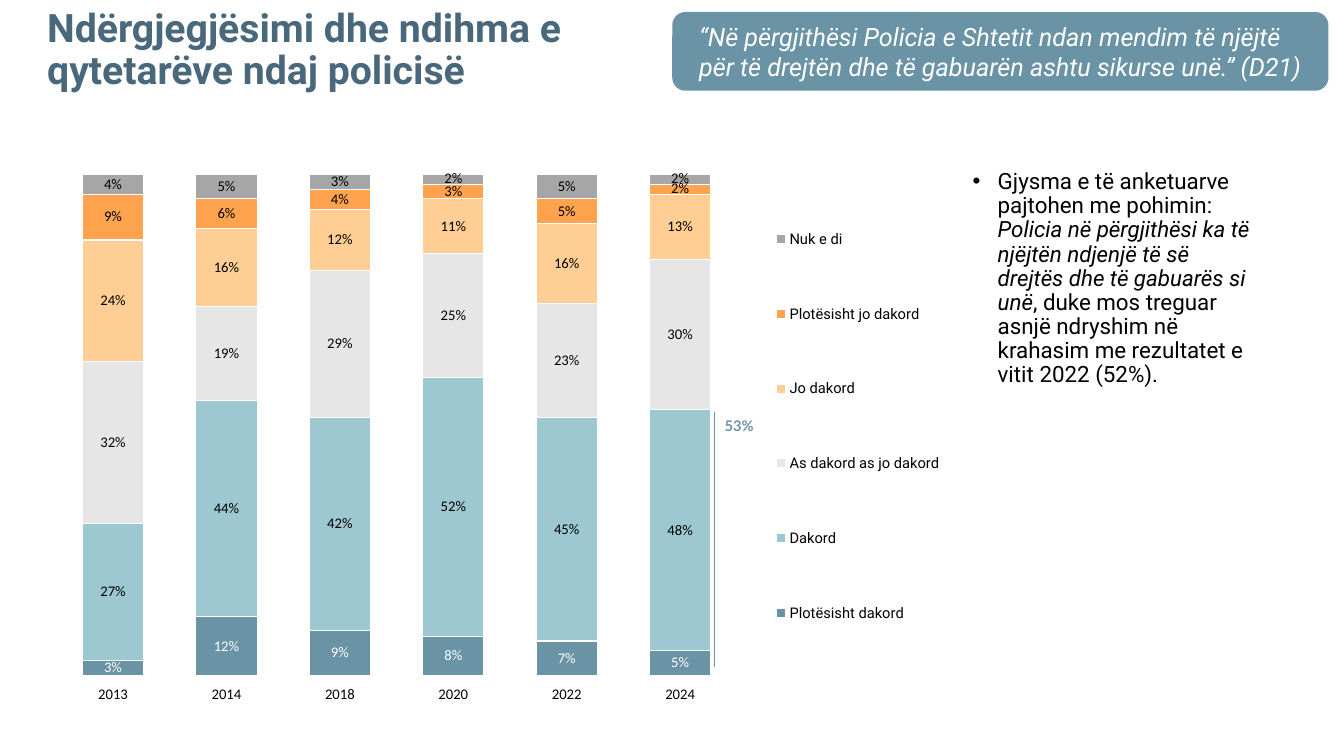
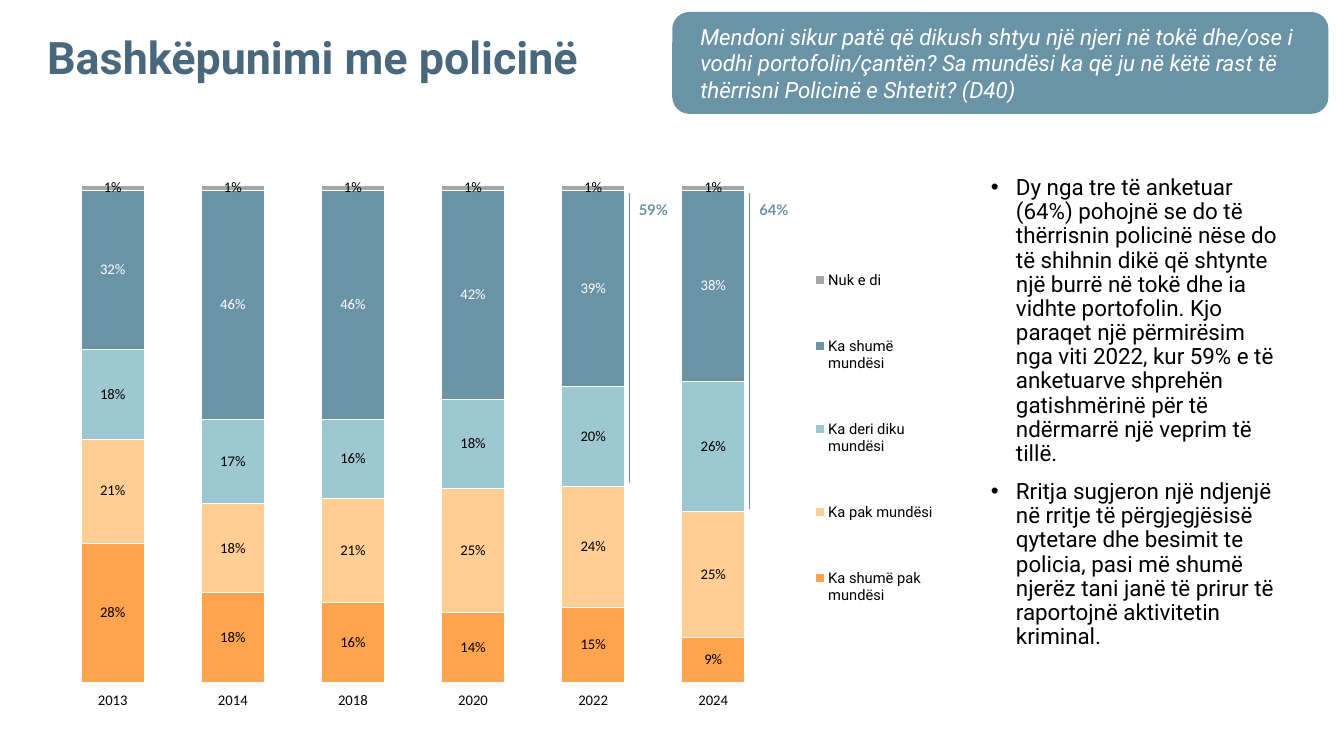
from lxml.etree import SubElement
from pptx import Presentation
from pptx.chart.data import CategoryChartData
from pptx.dml.color import RGBColor
from pptx.enum.chart import XL_CHART_TYPE, XL_LEGEND_POSITION, XL_TICK_LABEL_POSITION, XL_TICK_MARK
from pptx.enum.shapes import MSO_CONNECTOR, MSO_SHAPE
from pptx.enum.text import MSO_ANCHOR, PP_ALIGN
from pptx.oxml.ns import qn
from pptx.util import Pt

NAVY = RGBColor(0x49, 0x68, 0x7C)
STEEL = RGBColor(0x6A, 0x93, 0xA5)
AQUA = RGBColor(0x9D, 0xC8, 0xD1)
PALE = RGBColor(0xE7, 0xE6, 0xE6)
PEACH = RGBColor(0xFF, 0xCE, 0x94)
ORANGE = RGBColor(0xFF, 0xA3, 0x4E)
GRAY = RGBColor(0xA6, 0xA6, 0xA6)
BLACK = RGBColor(0, 0, 0)
WHITE = RGBColor(0xFF, 0xFF, 0xFF)

MARGIN = 26.6
CHART_W = 651.6
SMALL = 10.5
YEARS = ["2013", "2014", "2018", "2020", "2022", "2024"]

# Boxes are (left, top, width, height) in points; layouts are fractions of the chart.
# Paragraphs are lists of (text, italic); brackets are (x, top, bottom, label top, label).
SLIDES = [
    {
        "title": ("Ndërgjegjësimi dhe ndihma e qytetarëve ndaj policisë", 28, 8),
        "question": ("“Në përgjithësi Policia e Shtetit ndan mendim të njëjtë për të drejtën "
                     "dhe të gabuarën ashtu sikurse unë.” (D21)", 18, 56.2),
        "chart": (113.8, 393.8),
        "gap": 85,
        "plot": (0.021, 0.027, 0.746, 0.91),
        "legend": (0.8, 0.025, 0.2, 0.918),
        "series": [
            ("Plotësisht dakord", STEEL, (3, 12, 9, 8, 7, 5)),
            ("Dakord", AQUA, (27, 44, 42, 52, 45, 48)),
            ("As dakord as jo dakord", PALE, (32, 19, 29, 25, 23, 30)),
            ("Jo dakord", PEACH, (24, 16, 12, 11, 16, 13)),
            ("Plotësisht jo dakord", ORANGE, (9, 6, 4, 3, 5, 2)),
            ("Nuk e di", GRAY, (4, 5, 3, 2, 5, 2)),
        ],
        "brackets": [(510.5, 294.5, 476.6, 294.5, "53%")],
        "body": (687.6, 118, 216, 386),
        "bullets": [[
            ("Gjysma e të anketuarve pajtohen me pohimin: ", False),
            ("Policia në përgjithësi ka të njëjtën ndjenjë të së drejtës dhe të gabuarës si unë",
             True),
            (", duke mos treguar asnjë ndryshim në krahasim me rezultatet e vitit 2022 (52%).",
             False),
        ]],
    },
    {
        "title": ("Bashkëpunimi me policinë", 32, 14.4),
        "question": ("Mendoni sikur patë që dikush shtyu një njeri në tokë dhe/ose i vodhi "
                     "portofolin/çantën? Sa mundësi ka që ju në këtë rast të thërrisni Policinë "
                     "e Shtetit? (D40)", 16, 72.7),
        "chart": (121.7, 391.7),
        "gap": 90,
        "plot": (0.017, 0.028, 0.79, 0.906),
        "legend": (0.845, 0.095, 0.145, 0.785),
        "series": [
            ("Ka shumë pak mundësi", ORANGE, (28, 18, 16, 14, 15, 9)),
            ("Ka pak mundësi", PEACH, (21, 18, 21, 25, 24, 25)),
            ("Ka deri diku mundësi", AQUA, (18, 17, 16, 18, 20, 26)),
            ("Ka shumë mundësi", STEEL, (32, 46, 46, 42, 39, 38)),
            ("Nuk e di", GRAY, (1, 1, 1, 1, 1, 1)),
        ],
        "brackets": [(449.3, 138.2, 344.9, 139.7, "59%"), (535.3, 138.2, 363.6, 139.7, "64%")],
        "body": (700.6, 122.4, 222.5, 391.7),
        "bullets": [
            [("Dy nga tre të anketuar (64%) pohojnë se do të thërrisnin policinë nëse do të "
              "shihnin dikë që shtynte një burrë në tokë dhe ia vidhte portofolin. Kjo paraqet "
              "një përmirësim nga viti 2022, kur 59% e të anketuarve shprehën gatishmërinë për "
              "të ndërmarrë një veprim të tillë.", False)],
            [("Rritja sugjeron një ndjenjë në rritje të përgjegjësisë qytetare dhe besimit te "
              "policia, pasi më shumë njerëz tani janë të prirur të raportojnë aktivitetin "
              "kriminal.", False)],
        ],
    },
]


def set_font(font, name, size, color, bold=False, italic=False):
    font.name, font.size, font.bold, font.italic = name, Pt(size), bold, italic
    font.color.rgb = color


def add_text_box(slide, box):
    tf = slide.shapes.add_textbox(*map(Pt, box)).text_frame
    tf.word_wrap = True
    return tf


def add_title(slide, text, size, top):
    tf = add_text_box(slide, (MARGIN, top, 453, 56.2))
    tf.vertical_anchor = MSO_ANCHOR.MIDDLE
    tf.text = text
    p = tf.paragraphs[0]
    p.line_spacing = 0.9
    set_font(p.runs[0].font, "Roboto", size, NAVY, bold=True)


def add_question(slide, text, size, height):
    sp = slide.shapes.add_shape(MSO_SHAPE.ROUNDED_RECTANGLE,
                                Pt(480.2), Pt(8.6), Pt(468.7), Pt(height))
    sp.shadow.inherit = False
    sp.fill.solid()
    sp.fill.fore_color.rgb = STEEL
    sp.line.fill.background()
    tf = sp.text_frame
    tf.word_wrap = True
    tf.vertical_anchor = MSO_ANCHOR.MIDDLE
    tf.text = text
    p = tf.paragraphs[0]
    p.alignment = PP_ALIGN.LEFT
    p._p.get_or_add_pPr().set("marL", str(Pt(9.4)))
    set_font(p.runs[0].font, "Roboto", size, WHITE, italic=True)


def add_bullets(slide, box, paragraphs):
    tf = add_text_box(slide, box)
    for i, parts in enumerate(paragraphs):
        p = tf.add_paragraph() if i else tf.paragraphs[0]
        p.line_spacing = 0.9
        p.space_before = Pt(10)
        pPr = p._p.get_or_add_pPr()
        pPr.set("marL", str(Pt(18)))
        pPr.set("indent", str(-Pt(18)))
        SubElement(pPr, qn("a:buFont")).set("typeface", "Arial")
        SubElement(pPr, qn("a:buChar")).set("char", "•")
        for text, italic in parts:
            r = p.add_run()
            r.text = text
            set_font(r.font, "Roboto", 16, BLACK, italic=italic)


def set_layout(element, fractions, before, inner=False):
    """Place a plot area or legend by hand, ahead of its child named by before."""
    for old in element.findall(qn("c:layout")):
        element.remove(old)
    layout = SubElement(element, qn("c:layout"))
    if before is not None:
        before.addprevious(layout)
    manual = SubElement(layout, qn("c:manualLayout"))
    settings = [("layoutTarget", "inner")] if inner else []
    settings += [("xMode", "edge"), ("yMode", "edge")]
    settings += zip("xywh", fractions)
    for tag, value in settings:
        SubElement(manual, qn("c:" + tag)).set("val", str(value))


def add_stacked_chart(slide, content):
    top, height = content["chart"]
    data = CategoryChartData(number_format="0%")
    data.categories = YEARS
    for name, _, percents in content["series"]:
        data.add_series(name, [n / 100 for n in percents])
    chart = slide.shapes.add_chart(XL_CHART_TYPE.COLUMN_STACKED_100, Pt(MARGIN), Pt(top),
                                   Pt(CHART_W), Pt(height), data).chart
    chart.has_title = False
    set_font(chart.font, "Calibri", SMALL, BLACK)

    axis = chart.category_axis
    axis.major_tick_mark = XL_TICK_MARK.NONE
    axis.tick_label_position = XL_TICK_LABEL_POSITION.LOW
    axis.format.line.fill.background()
    chart.value_axis.visible = False
    chart.value_axis.has_major_gridlines = False
    chart.value_axis.maximum_scale = 1

    plot = chart.plots[0]
    plot.gap_width, plot.overlap = content["gap"], 100
    for series, (_, color, _) in zip(plot.series, content["series"]):
        series.format.fill.solid()
        series.format.fill.fore_color.rgb = color
        series.format.line.color.rgb = WHITE
        series.format.line.width = Pt(0.75)
        labels = series.data_labels
        labels.show_value = True
        labels.number_format, labels.number_format_is_linked = "0%", False
        set_font(labels.font, "Calibri", SMALL, WHITE if color == STEEL else BLACK)

    chart.has_legend = True
    legend = chart.legend
    legend.position = XL_LEGEND_POSITION.RIGHT
    legend.include_in_layout = False
    set_font(legend.font, "Roboto", SMALL, BLACK)
    overlay = legend._element.find(qn("c:overlay"))
    set_layout(legend._element, content["legend"], overlay)
    area = chart._chartSpace.chart.plotArea
    set_layout(area, content["plot"], area.find(qn("c:barChart")), inner=True)


def add_bracket(slide, x, top, bottom, label_top, label):
    """Draw the line beside a column and the sum of the parts that it spans."""
    line = slide.shapes.add_connector(MSO_CONNECTOR.STRAIGHT, Pt(x), Pt(top), Pt(x), Pt(bottom))
    line.line.color.rgb = STEEL
    line.line.width = Pt(0.5)
    SubElement(line._element.spPr, qn("a:effectLst"))
    tf = add_text_box(slide, (x, label_top, 46, 20))
    tf.text = label
    set_font(tf.paragraphs[0].runs[0].font, "Lato", SMALL, STEEL, bold=True)


def main():
    prs = Presentation()
    prs.slide_width, prs.slide_height = Pt(960), Pt(540)
    for content in SLIDES:
        slide = prs.slides.add_slide(prs.slide_layouts[6])
        add_title(slide, *content["title"])
        add_stacked_chart(slide, content)
        add_bullets(slide, content["body"], content["bullets"])
        add_question(slide, *content["question"])
        for bracket in content["brackets"]:
            add_bracket(slide, *bracket)
    prs.save("out.pptx")


if __name__ == "__main__":
    main()
